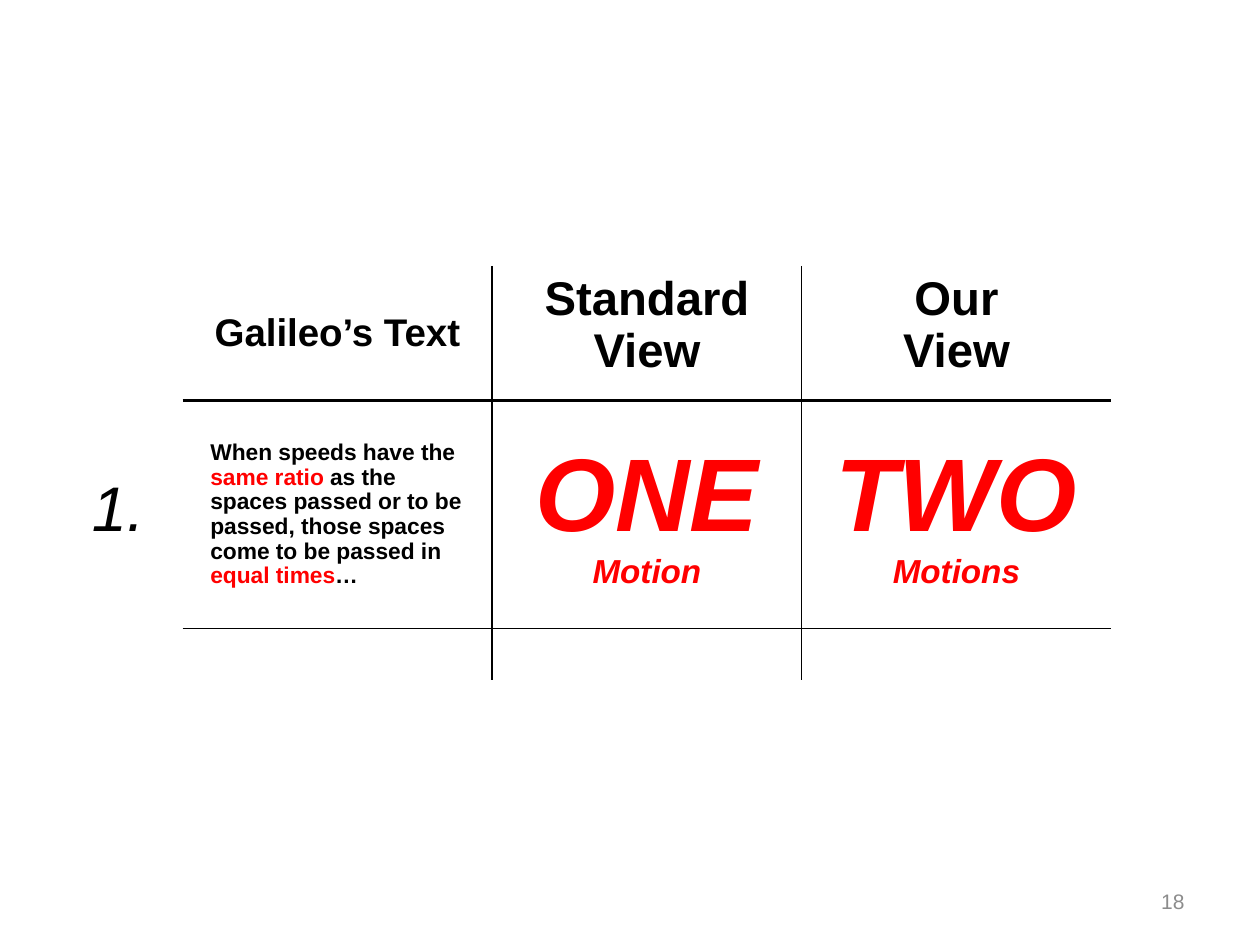
from lxml.etree import SubElement
from pptx import Presentation
from pptx.dml.color import RGBColor
from pptx.enum.text import MSO_ANCHOR, MSO_AUTO_SIZE, PP_ALIGN
from pptx.oxml.ns import qn
from pptx.util import Inches, Pt

COLORS = {"ink": "000000", "accent": "FF0000", "muted": "8C8C8C"}
FONT = "Arial"
NO_STYLE = "{2D5ABB26-0587-4C30-8999-92F81FD0307C}"
ROW_HEIGHTS = (1.07, 1.81, 0.4)
COLUMNS = 3
HEADER_INSETS = (0.11, 0.05)
BODY_INSETS = (0.22, 0.11)

# Each cell is a list of paragraphs; each paragraph a list of (text, size, color).
HEADERS = [
    [[("Galileo’s Text", 22, "ink")]],
    [[("Standard View", 27, "ink")]],
    [[("Our", 27, "ink")], [("View", 27, "ink")]],
]
QUOTE = [[
    ("When speeds have the ", 13, "ink"),
    ("same ratio ", 13, "accent"),
    ("as the spaces passed or to be passed, those spaces "
     "come to be passed in ", 13, "ink"),
    ("equal times", 13, "accent"),
    ("…", 13, "ink"),
]]
VERDICTS = [
    [[("ONE ", 59, "accent"), ("Motion", 19, "accent")]],
    [[("TWO ", 59, "accent"), ("Motions", 19, "accent")]],
]


def write(frame, paragraphs, align, bold=False, italic=False, spacing=None):
    for index, spans in enumerate(paragraphs):
        para = frame.add_paragraph() if index else frame.paragraphs[0]
        para.alignment = align
        para.line_spacing = spacing
        para.font.name = FONT
        para.font.bold = bold
        para.font.italic = italic
        for text, size, color in spans:
            span = para.add_run()
            span.text = text
            span.font.size = Pt(size)
            span.font.color.rgb = RGBColor.from_string(COLORS[color])


def fill_cell(cell, paragraphs, insets, anchor, align=PP_ALIGN.CENTER, **style):
    cell.margin_left = cell.margin_right = Inches(insets[0])
    cell.margin_top = cell.margin_bottom = Inches(insets[1])
    cell.vertical_anchor = anchor
    write(cell.text_frame, paragraphs, align, bold=True, **style)


def rule_cell(cell, row, column):
    """Draw the inner grid lines, with a heavier one under the header."""
    widths = {
        "a:lnL": 1 if column else 0,
        "a:lnR": 1 if column < COLUMNS - 1 else 0,
        "a:lnT": (0, 2, 1)[row],
        "a:lnB": (2, 1, 0)[row],
    }
    properties = cell._tc.get_or_add_tcPr()
    for tag, width in widths.items():
        line = SubElement(properties, qn(tag), w=str(Pt(width)))
        if width:
            paint = SubElement(line, qn("a:solidFill"))
            SubElement(paint, qn("a:srgbClr"), val=COLORS["ink"])
        else:
            SubElement(line, qn("a:noFill"))
    cell.fill.background()


def add_comparison(page, left, top, width):
    height = Inches(sum(ROW_HEIGHTS))
    frame = page.shapes.add_table(len(ROW_HEIGHTS), COLUMNS, left, top, width, height)
    table = frame.table
    table.first_row = table.horz_banding = False
    table._tbl.tblPr.find(qn("a:tableStyleId")).text = NO_STYLE
    for row, row_height in enumerate(ROW_HEIGHTS):
        table.rows[row].height = Inches(row_height)
        for column in range(COLUMNS):
            rule_cell(table.cell(row, column), row, column)

    for column, header in enumerate(HEADERS):
        anchor = MSO_ANCHOR.TOP if column else MSO_ANCHOR.MIDDLE
        fill_cell(table.cell(0, column), header, HEADER_INSETS, anchor)
    fill_cell(table.cell(1, 0), QUOTE, BODY_INSETS, MSO_ANCHOR.MIDDLE,
              PP_ALIGN.LEFT, spacing=0.97)
    for column, verdict in enumerate(VERDICTS, start=1):
        fill_cell(table.cell(1, column), verdict, BODY_INSETS,
                  MSO_ANCHOR.MIDDLE, italic=True)


def add_item_number(page, *bounds):
    frame = page.shapes.add_textbox(*bounds).text_frame
    frame.word_wrap = False
    frame.auto_size = MSO_AUTO_SIZE.SHAPE_TO_FIT_TEXT
    write(frame, [[("1.", 36, "ink")]], PP_ALIGN.LEFT, italic=True)


def add_page_number(page, *bounds):
    frame = page.shapes.add_textbox(*bounds).text_frame
    frame.word_wrap = True
    frame.vertical_anchor = MSO_ANCHOR.MIDDLE
    write(frame, [[("18", 12, "muted")]], PP_ALIGN.RIGHT)


def main():
    deck = Presentation()
    deck.slide_width, deck.slide_height = Inches(10), Inches(7.5)
    page = deck.slides.add_slide(deck.slide_layouts[6])
    add_comparison(page, Inches(1.45), Inches(2.11), Inches(7.37))
    add_item_number(page, Inches(0.63), Inches(3.67), Inches(0.75), Inches(0.71))
    add_page_number(page, Inches(7.17), Inches(6.95), Inches(2.33), Inches(0.4))
    deck.save("out.pptx")


if __name__ == "__main__":
    main()
